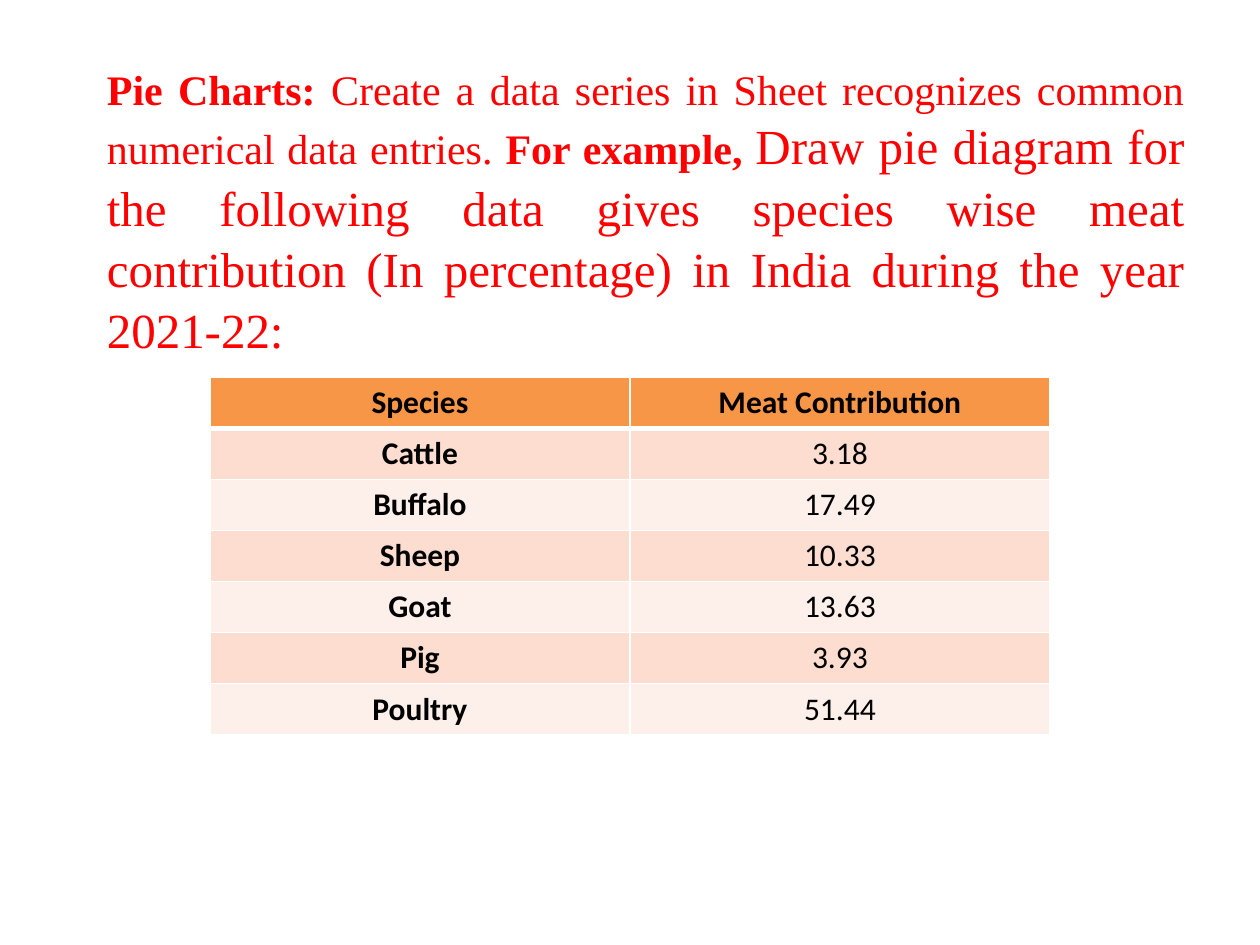
"""Build a slide with a pie chart exercise and its table of species-wise meat contribution."""
from typing import NamedTuple

from lxml.etree import SubElement
from pptx import Presentation
from pptx.dml.color import RGBColor
from pptx.enum.text import MSO_ANCHOR, PP_ALIGN
from pptx.oxml.ns import qn
from pptx.util import Pt

RED = RGBColor(0xFF, 0x00, 0x00)
BLACK = RGBColor(0x00, 0x00, 0x00)
WHITE = RGBColor(0xFF, 0xFF, 0xFF)
ORANGE = RGBColor(0xF7, 0x96, 0x46)
BANDS = (RGBColor(0xFD, 0xEF, 0xE9), RGBColor(0xFC, 0xDD, 0xCF))
ROW_HEIGHT = Pt(29.2)
COLUMN_WIDTH = Pt(240)


class Phrase(NamedTuple):
    text: str
    size: float
    bold: bool


class Species(NamedTuple):
    name: str
    contribution: str


EXERCISE = (
    Phrase("Pie Charts: ", 24, True),
    Phrase("Create a data series in Sheet recognizes common numerical data entries. ", 24, False),
    Phrase("For example, ", 24, True),
    Phrase(
        "Draw pie diagram for the following data gives species wise meat "
        "contribution (In percentage) in India during the year 2021-22:",
        28,
        False,
    ),
)
HEADER = Species("Species", "Meat Contribution")
SPECIES = (
    Species("Cattle", "3.18"),
    Species("Buffalo", "17.49"),
    Species("Sheep", "10.33"),
    Species("Goat", "13.63"),
    Species("Pig", "3.93"),
    Species("Poultry", "51.44"),
)


def add_run(paragraph, phrase: Phrase, font_name: str, color: RGBColor) -> None:
    """Append a formatted phrase to a paragraph."""
    run = paragraph.add_run()
    run.text = phrase.text
    formats = {"name": font_name, "size": Pt(phrase.size), "bold": phrase.bold}
    for attribute, value in formats.items():
        setattr(run.font, attribute, value)
    run.font.color.rgb = color


def add_exercise(slide, phrases: tuple[Phrase, ...]) -> None:
    """Add the justified exercise text."""
    text_box = slide.shapes.add_textbox(Pt(54), Pt(30), Pt(630), Pt(474))
    text_frame = text_box.text_frame
    formats = {"word_wrap": True, "vertical_anchor": MSO_ANCHOR.TOP, "margin_top": Pt(5)}
    for attribute, value in formats.items():
        setattr(text_frame, attribute, value)
    paragraph = text_frame.paragraphs[0]
    paragraph.alignment = PP_ALIGN.JUSTIFY
    paragraph.line_spacing = 1.04
    for phrase in phrases:
        add_run(paragraph, phrase, "Times New Roman", RED)


def set_borders(cell, widths: dict[str, float]) -> None:
    """Draw white borders of the given widths before the cell fill is set."""
    properties = cell._tc.get_or_add_tcPr()
    for side, width in widths.items():
        line = SubElement(properties, qn(f"a:{side}"), w=str(Pt(width)))
        fill = SubElement(line, qn("a:solidFill"))
        SubElement(fill, qn("a:srgbClr"), val=str(WHITE))


def fill_cell(cell, text: str, bold: bool, color: RGBColor, top: float, bottom: float) -> None:
    """Write a centred table cell with its borders and fill."""
    set_borders(cell, {"lnL": 1, "lnR": 1, "lnT": top, "lnB": bottom})
    cell.fill.solid()
    cell.fill.fore_color.rgb = color
    cell.vertical_anchor = MSO_ANCHOR.MIDDLE
    paragraph = cell.text_frame.paragraphs[0]
    paragraph.alignment = PP_ALIGN.CENTER
    add_run(paragraph, Phrase(text, 18, bold), "Calibri", BLACK)


def add_species_table(slide, header: Species, records: tuple[Species, ...]) -> None:
    """Add the banded table with one row for each species."""
    rows = (header, *records)
    columns = len(header)
    frame = slide.shapes.add_table(
        len(rows), columns, Pt(120), Pt(215.5), COLUMN_WIDTH * columns, ROW_HEIGHT * len(rows)
    )
    table = frame.table
    for row_index, record in enumerate(rows):
        table.rows[row_index].height = ROW_HEIGHT
        is_header = row_index == 0
        color = ORANGE if is_header else BANDS[row_index % 2]
        top = 3 if row_index == 1 else 1
        bottom = 3 if is_header else 1
        for column_index, text in enumerate(record):
            bold = is_header or column_index == 0
            fill_cell(table.cell(row_index, column_index), text, bold, color, top, bottom)


def main() -> None:
    """Create and save the presentation."""
    presentation = Presentation()
    presentation.slide_width = Pt(720)
    presentation.slide_height = Pt(540)
    slide = presentation.slides.add_slide(presentation.slide_layouts.get_by_name("Blank"))
    add_exercise(slide, EXERCISE)
    add_species_table(slide, HEADER, SPECIES)
    presentation.save("out.pptx")


if __name__ == "__main__":
    main()
